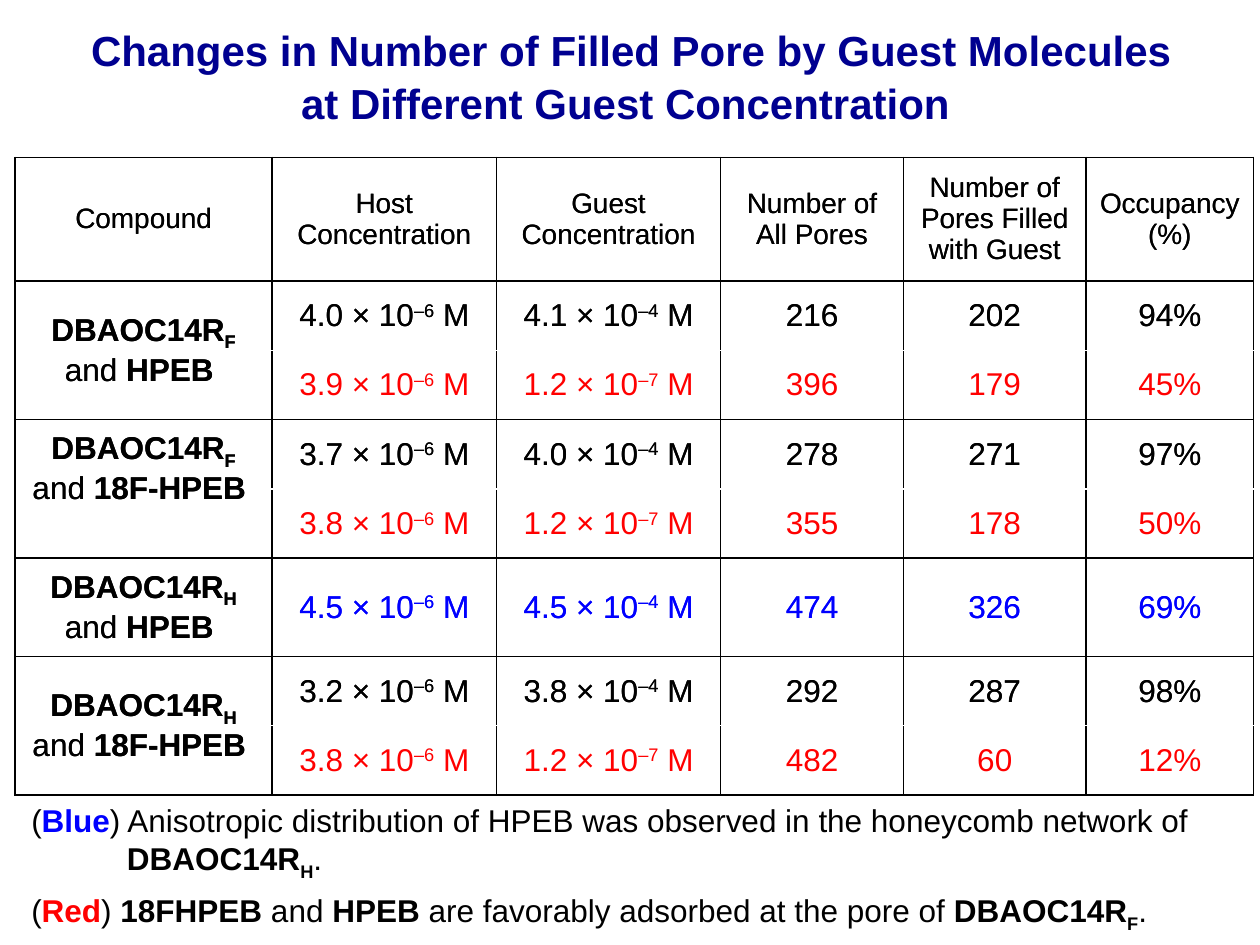
"""Build the slide on filled pores at different guest concentrations."""
from lxml.etree import SubElement
from pptx import Presentation
from pptx.dml.color import RGBColor
from pptx.enum.text import MSO_ANCHOR, PP_ALIGN
from pptx.oxml.ns import qn
from pptx.util import Inches, Pt

BLACK, RED, BLUE, NAVY, WHITE = "000000", "FF0000", "0000FF", "000090", "FFFFFF"


def add_spans(paragraph, spans, size=18):
    """Add (text, colour, bold, baseline percent) runs to a paragraph."""
    for text, colour, bold, baseline in spans:
        span = paragraph.add_run()
        span.text = text
        span.font.name = "Arial"
        span.font.size = Pt(size)
        span.font.bold = bold
        span.font.color.rgb = RGBColor.from_string(colour)
        if baseline:
            span.font._element.set("baseline", str(baseline * 1000))


def set_borders(cell, top, bottom):
    """Draw 1 pt borders, black at the sides."""
    properties = cell._tc.get_or_add_tcPr()
    for side, colour in (("L", BLACK), ("R", BLACK), ("T", top), ("B", bottom)):
        line = SubElement(properties, qn(f"a:ln{side}"), w=str(Pt(1)))
        SubElement(SubElement(line, qn("a:solidFill")), qn("a:srgbClr"), val=colour)


deck = Presentation()
deck.slide_width, deck.slide_height = Inches(10), Inches(7.5)
page = deck.slides.add_slide(deck.slide_layouts[5])

title = page.shapes.title
title.left, title.top = Inches(0.44), Inches(0.14)
title.width, title.height = Inches(9.14), Inches(0.91)
title.text_frame.vertical_anchor = MSO_ANCHOR.MIDDLE
heading = title.text_frame.paragraphs[0]
heading.alignment = PP_ALIGN.CENTER
heading.line_spacing = 1.05
add_spans(heading, [("Changes in Number of Filled Pore by Guest Molecules "
                     "at Different Guest Concentration ", NAVY, True, 0)], 24)

headers = ["Compound", "Host Concentration", "Guest Concentration",
           "Number of All Pores", "Number of Pores Filled with Guest", "Occupancy (%)"]
groups = [
    ("F", "HPEB", [(BLACK, "4.0", "6", "4.1", "4", "216", "202", "94%"),
                   (RED, "3.9", "6", "1.2", "7", "396", "179", "45%")]),
    ("F", "18F-HPEB", [(BLACK, "3.7", "6", "4.0", "4", "278", "271", "97%"),
                       (RED, "3.8", "6", "1.2", "7", "355", "178", "50%")]),
    ("H", "HPEB", [(BLUE, "4.5", "6", "4.5", "4", "474", "326", "69%")]),
    ("H", "18F-HPEB", [(BLACK, "3.2", "6", "3.8", "4", "292", "287", "98%"),
                       (RED, "3.8", "6", "1.2", "7", "482", "60", "12%")]),
]
column_widths = [2.04, 1.78, 1.78, 1.45, 1.45, 1.33]
row_heights = [0.98, 0.55, 0.55, 0.55, 0.55, 0.78, 0.55, 0.55]

for divider, colours in ((BLACK, (BLACK, BLUE, RED)), (WHITE, (BLACK, BLUE))):
    table = page.shapes.add_table(len(row_heights), len(column_widths), Inches(0.12), Inches(1.25),
                                  Inches(sum(column_widths)), Inches(sum(row_heights))).table
    table.first_row = table.horz_banding = False
    for column, width in zip(table.columns, column_widths):
        column.width = Inches(width)
    for row, height in zip(table.rows, row_heights):
        row.height = Inches(height)

    for column, header in enumerate(headers):
        cell = table.cell(0, column)
        add_spans(cell.text_frame.paragraphs[0], [(header, BLACK, False, 0)], 16)
        set_borders(cell, BLACK, BLACK)

    first = 1
    for subscript, guest, samples in groups:
        last = first + len(samples) - 1
        compound = table.cell(first, 0)
        if last > first:
            compound.merge(table.cell(last, 0))
        add_spans(compound.text_frame.paragraphs[0],
                  [("DBAOC14R", BLACK, True, 0), (f"{subscript} ", BLACK, True, -25),
                   ("and ", BLACK, False, 0), (f"{guest} ", BLACK, True, 0)])
        if (subscript, guest) == ("F", "18F-HPEB"):
            compound.margin_bottom = Inches(0.37)
        for current, sample in enumerate(samples, first):
            colour, host, host_power, guest_value, guest_power, *counts = sample
            set_borders(table.cell(current, 0), BLACK, BLACK)
            values = [[(f"{value} × 10", colour, False, 0), (f"–{power}", colour, False, 30),
                       (" M", colour, False, 0)]
                      for value, power in ((host, host_power), (guest_value, guest_power))]
            values += [[(count, colour, False, 0)] for count in counts]
            for column, spans in enumerate(values, 1):
                cell = table.cell(current, column)
                if colour in colours:
                    add_spans(cell.text_frame.paragraphs[0], spans)
                set_borders(cell, BLACK if current == first else divider,
                            BLACK if current == last else divider)
        first = last + 1

    for cell in table.iter_cells():
        cell.fill.background()
        cell.vertical_anchor = MSO_ANCHOR.MIDDLE
        cell.text_frame.paragraphs[0].alignment = PP_ALIGN.CENTER

blue_note = page.shapes.add_textbox(Inches(0.15), Inches(6.31), Inches(9.8), Inches(0.71)).text_frame
blue_note.word_wrap = True
add_spans(blue_note.paragraphs[0], [
    ("(", BLACK, False, 0), ("Blue", BLUE, True, 0),
    (") Anisotropic distribution of HPEB was observed in the honeycomb network of",
     BLACK, False, 0)])
continuation = blue_note.add_paragraph()
continuation._p.get_or_add_pPr().set("marL", str(Inches(0.76)))
add_spans(continuation, [("DBAOC14R", BLACK, True, 0), ("H", BLACK, True, -25),
                         (".", BLACK, False, 0)])

red_note = page.shapes.add_textbox(Inches(0.15), Inches(7.02), Inches(9.16), Inches(0.4)).text_frame
red_note.word_wrap = False
add_spans(red_note.paragraphs[0], [
    ("(", BLACK, False, 0), ("Red", RED, True, 0), (")", BLACK, False, 0),
    (" 18FHPEB ", BLACK, True, 0), ("and ", BLACK, False, 0), ("HPEB", BLACK, True, 0),
    (" are favorably adsorbed at the pore of ", BLACK, False, 0),
    ("DBAOC14R", BLACK, True, 0), ("F", BLACK, True, -25), (".", BLACK, False, 0)])

deck.save("out.pptx")
